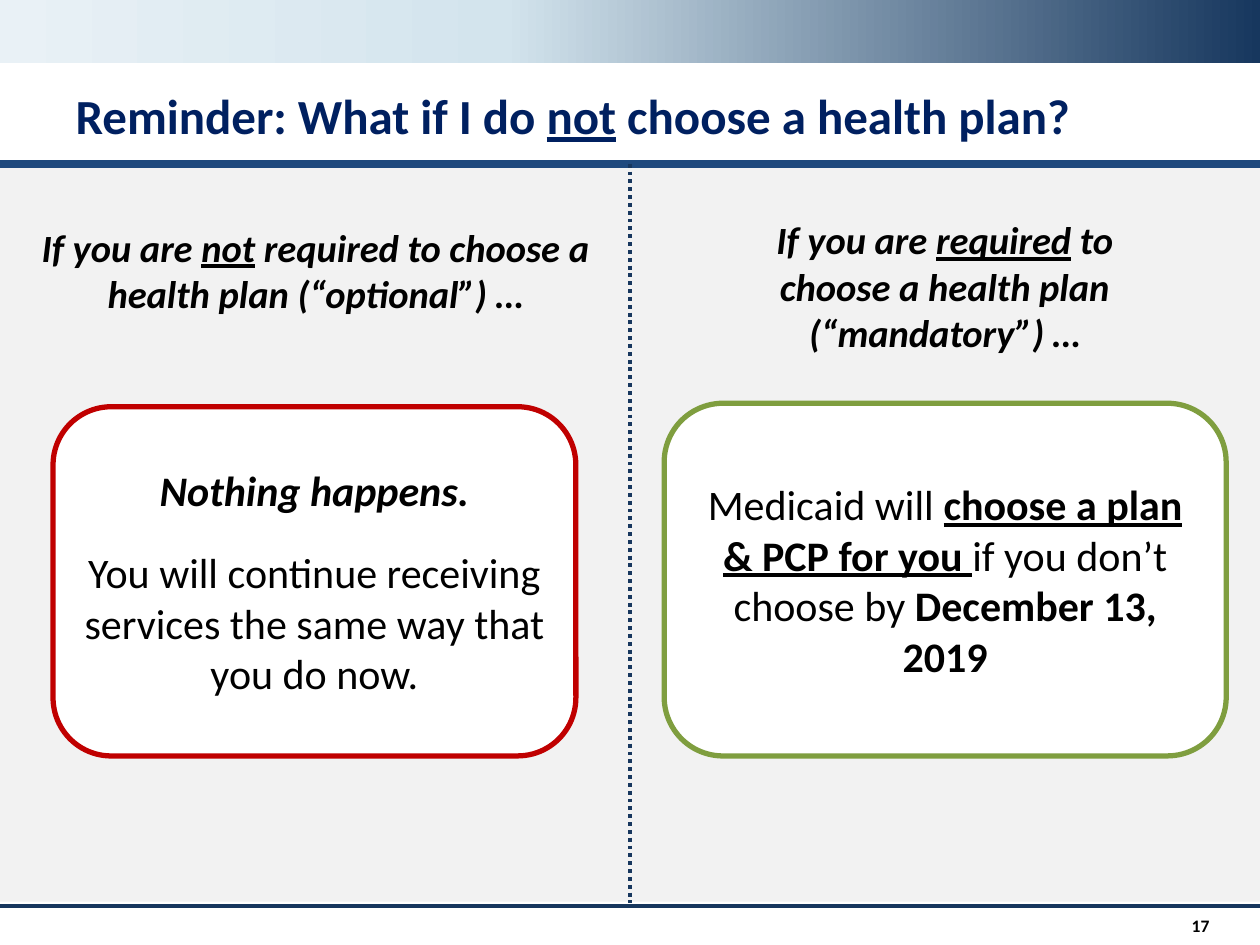
from lxml import etree
from pptx import Presentation
from pptx.dml.color import RGBColor
from pptx.enum import dml, shapes, text
from pptx.oxml.ns import qn
from pptx.util import Cm, Pt

COLORS = {
    "navy": "002060", "rule": "1F497D", "dark": "17375E", "pale": "D3E4ED",
    "mist": "E9F1F6", "panel": "F2F2F2", "white": "FFFFFF", "black": "000000",
    "red": "C00000", "green": "7F9E3F",
}
# Style letters: b bold, i italic, u underlined
PLAIN, BOLD, BOLD_UNDER = "", "b", "bu"
ITALIC, ITALIC_UNDER = "bi", "biu"


def rgb(name):
    return RGBColor.from_string(COLORS[name])


class SlideBuilder:
    font = "Calibri"

    def __init__(self, s):
        self.s = s

    def fill_text(self, tf, paragraphs, size, color="black", align="CENTER",
                  anchor="TOP", after=(), spacing=None):
        """Each paragraph is a list of (words, style letters) runs."""
        tf.word_wrap = True
        tf.auto_size = text.MSO_AUTO_SIZE.NONE
        tf.vertical_anchor = text.MSO_ANCHOR[anchor]
        for i, runs in enumerate(paragraphs):
            p = tf.add_paragraph() if i else tf.paragraphs[0]
            p.alignment = text.PP_ALIGN[align]
            if after:
                p.space_after = Pt(after[i])
            if spacing:
                p.line_spacing = spacing
            for words, style in runs:
                r = p.add_run()
                r.text = words
                f = r.font
                f.name, f.size, f.color.rgb = self.font, Pt(size), rgb(color)
                f.bold, f.italic = "b" in style, "i" in style
                f.underline = "u" in style

    def title(self, box, runs):
        sp = self.s.shapes.title
        sp.left, sp.top, sp.width, sp.height = map(Cm, box)
        self.fill_text(sp.text_frame, [runs], 28, "navy", "LEFT", spacing=0.9)

    def label(self, box, runs, size, **kw):
        sp = self.s.shapes.add_textbox(*map(Cm, box))
        self.fill_text(sp.text_frame, [runs], size, **kw)

    def block(self, box, fill, kind="RECTANGLE", line=None):
        sp = self.s.shapes.add_shape(shapes.MSO_SHAPE[kind], *map(Cm, box))
        sp.shadow.inherit = False
        sp.fill.solid()
        sp.fill.fore_color.rgb = rgb(fill)
        if line:
            sp.line.color.rgb = rgb(line)
            sp.line.width = Pt(3)
        else:
            sp.line.fill.background()
        return sp

    def gradient(self, box, stops, angle):
        sp = self.block(box, stops[0][1])
        sp.fill.gradient()
        sp.fill.gradient_angle = angle
        gs_list = sp._element.spPr.find(".//" + qn("a:gsLst"))
        for gs in list(gs_list):
            gs_list.remove(gs)
        for pos, color in stops:
            gs = etree.SubElement(gs_list, qn("a:gs"), pos=str(pos * 1000))
            etree.SubElement(gs, qn("a:srgbClr"), val=COLORS[color])

    def card(self, box, line, paragraphs, after):
        sp = self.block(box, "white", "ROUNDED_RECTANGLE", line)
        self.fill_text(sp.text_frame, paragraphs, 24, anchor="MIDDLE",
                       after=after)

    def line(self, x1, y1, x2, y2, color, width, dash=None):
        c = self.s.shapes.add_connector(shapes.MSO_CONNECTOR.STRAIGHT,
                                        *map(Cm, (x1, y1, x2, y2)))
        c.line.color.rgb = rgb(color)
        c.line.width = Pt(width)
        if dash:
            c.line.dash_style = dash
        etree.SubElement(c._element.spPr, qn("a:effectLst"))


def main():
    prs = Presentation()
    prs.slide_width, prs.slide_height = Cm(25.4), Cm(19.05)
    b = SlideBuilder(prs.slides.add_slide(prs.slide_layouts[5]))
    width, middle, top = 25.4, 12.7, 3.3

    # Header band, rules and background panel
    b.gradient((0, 0, width, 1.27),
               [(0, "dark"), (60, "pale"), (100, "mist")], 180)
    b.line(0, 3.28, width, 3.28, "navy", 2)
    b.line(0, 18.26, width, 18.26, "dark", 2.25)
    b.block((0, top, width, 14.88), "panel")

    # Title
    b.title((1.27, 1.73, 22.86, 1.52), [
        ("Reminder: What if I do ", BOLD), ("not", BOLD_UNDER),
        (" choose a health plan?", BOLD)])
    b.line(0, top, width, top, "rule", 4.5)

    # Page number
    b.label((23.06, 18.26, 1.57, 0.79), [("17", BOLD)], 10,
            align="RIGHT", anchor="MIDDLE")

    # Left column: optional
    b.card((1.07, 8.2, 10.54, 7.04), "red", [
        [("Nothing happens.", ITALIC)],
        [("You will continue receiving services the same way that you do now.",
          PLAIN)]], after=(18, 12))
    b.label((0.58, 4.39, 11.56, 2.13), [
        ("If you are ", ITALIC), ("not", ITALIC_UNDER),
        (" required to choose a health plan (“optional”) …", ITALIC)], 22)

    # Right column: mandatory
    b.label((14.27, 4.24, 9.55, 3.07), [
        ("If you are ", ITALIC), ("required", ITALIC_UNDER),
        (" to choose a health plan (“mandatory”) …", ITALIC)], 22)
    b.card((13.39, 8.13, 11.33, 7.11), "green", [[
        ("Medicaid will ", PLAIN), ("choose a plan & PCP for you ", BOLD_UNDER),
        ("if you don’t choose by ", PLAIN), ("December 13, 2019", BOLD)]],
        after=(18,))

    # Column divider
    b.line(middle, top, middle, 18.21, "dark", 2.25,
           dml.MSO_LINE.ROUND_DOT)

    prs.save("out.pptx")


if __name__ == "__main__":
    main()
